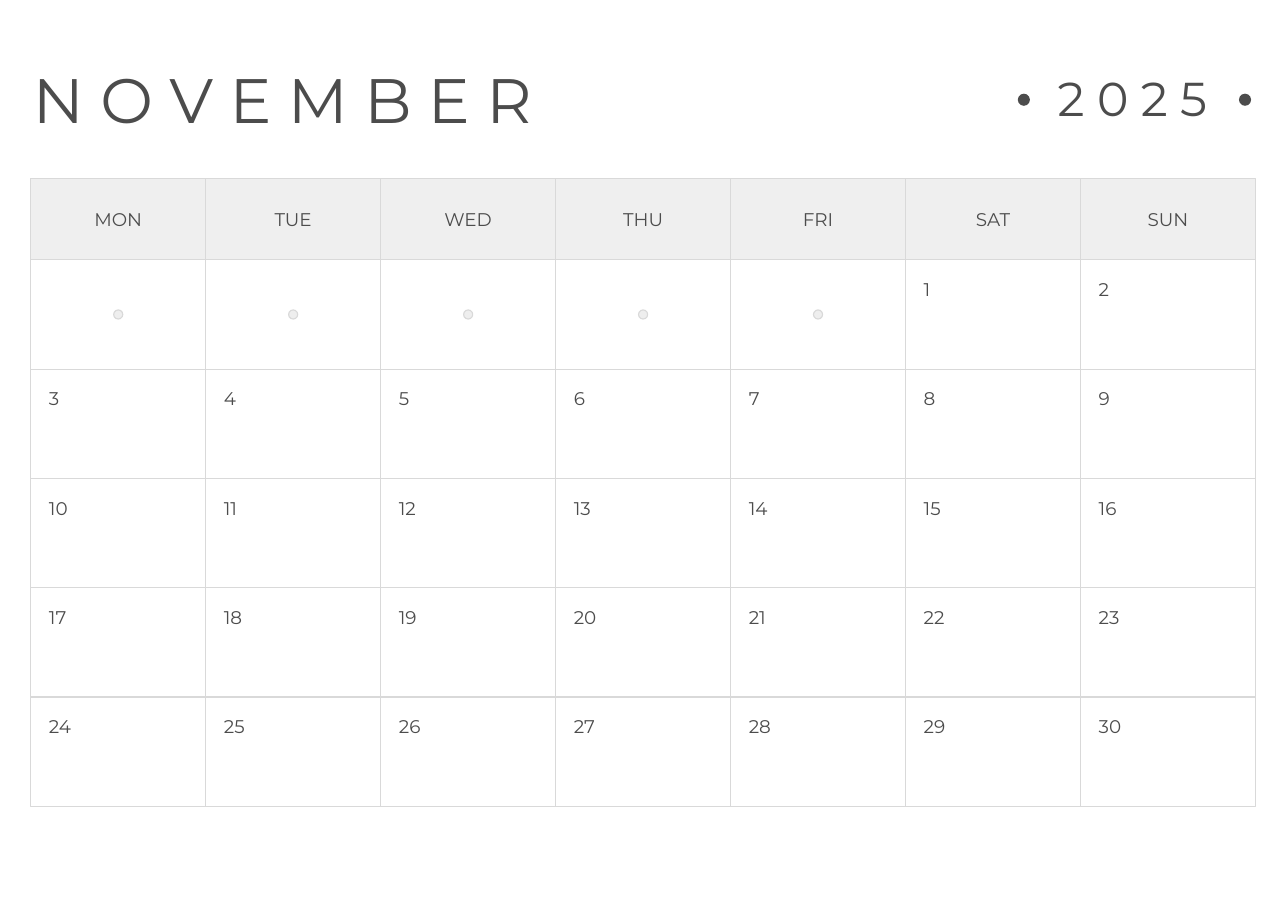
from pptx import Presentation
from pptx.dml.color import RGBColor
from pptx.enum.shapes import MSO_SHAPE as Form
from pptx.enum.text import MSO_AUTO_SIZE as Fit, PP_ALIGN as Align
from pptx.util import Cm, Pt

FONT = "Montserrat"
INK = RGBColor(0x4C, 0x4C, 0x4C)
HEAD = RGBColor(0xEF, 0xEF, 0xEF)
PALE = RGBColor(0xEE, 0xEE, 0xEE)
EDGE = RGBColor(0xD9, 0xD9, 0xD9)

DAYS = ["MON", "TUE", "WED", "THU", "FRI", "SAT", "SUN"]
WEEKS = 5
START = 5


def put_text(slide, text, left, top, width, height, size=12, align=Align.LEFT):
    box = slide.shapes.add_textbox(Cm(left), Cm(top), Cm(width), Cm(height))
    frame = box.text_frame
    frame.margin_left = frame.margin_right = 0
    frame.margin_top = frame.margin_bottom = 0
    frame.word_wrap = True
    frame.auto_size = Fit.SHAPE_TO_FIT_TEXT
    para = frame.paragraphs[0]
    para.alignment = align
    run = para.add_run()
    run.text = text
    run.font.name = FONT
    run.font.size = Pt(size)
    run.font.color.rgb = INK


def put_shape(slide, form, left, top, width, height, fill=None, line=None):
    shape = slide.shapes.add_shape(form, Cm(left), Cm(top), Cm(width), Cm(height))
    shape.shadow.inherit = False
    if fill is None:
        shape.fill.background()
    else:
        shape.fill.solid()
        shape.fill.fore_color.rgb = fill
    if line is None:
        shape.line.fill.background()
    else:
        shape.line.color.rgb = line
        shape.line.width = Pt(0.75)


def put_dot(slide, x, y, size, fill, line=None):
    put_shape(slide, Form.OVAL, x - size / 2, y - size / 2, size, size, fill, line)


def draw_title(slide, left, top, width):
    put_text(slide, "N O V E M B E R", left, top, 13.61, 1.75, size=41)
    year = 5.54
    start = left + width - year
    put_text(slide, "2 0 2 5", start, top + 0.2, year, 1.32, size=31, align=Align.CENTER)
    for x in (start + 0.27, start + year - 0.17):
        put_dot(slide, x, top + 0.9, 0.28, INK)


def draw_month(slide, left, top, width, height):
    col = width / len(DAYS)
    head = 1.88
    row = (height - head) / WEEKS
    label = 1.45
    for i, name in enumerate(DAYS):
        x = left + i * col
        put_shape(slide, Form.RECTANGLE, x, top, col, head, HEAD, EDGE)
        put_text(slide, name, x + (col - label) / 2, top + 0.69, label, 0.51,
                 align=Align.CENTER)
        for week in range(WEEKS):
            y = top + head + week * row
            put_shape(slide, Form.RECTANGLE, x, y, col, row, line=EDGE)
            day = week * len(DAYS) + i - START + 1
            if day > 0:
                put_text(slide, str(day), x + 0.42, y + 0.42, label, 0.51)
            else:
                put_dot(slide, x + col / 2, y + row / 2, 0.21, PALE, EDGE)


def main():
    deck = Presentation()
    deck.slide_width = Cm(29.7)
    deck.slide_height = Cm(21)
    slide = deck.slides.add_slide(deck.slide_layouts[6])
    draw_title(slide, 0.76, 1.4, 28.12)
    draw_month(slide, 0.71, 4.11, 28.24, 14.48)
    deck.save("out.pptx")


if __name__ == "__main__":
    main()
